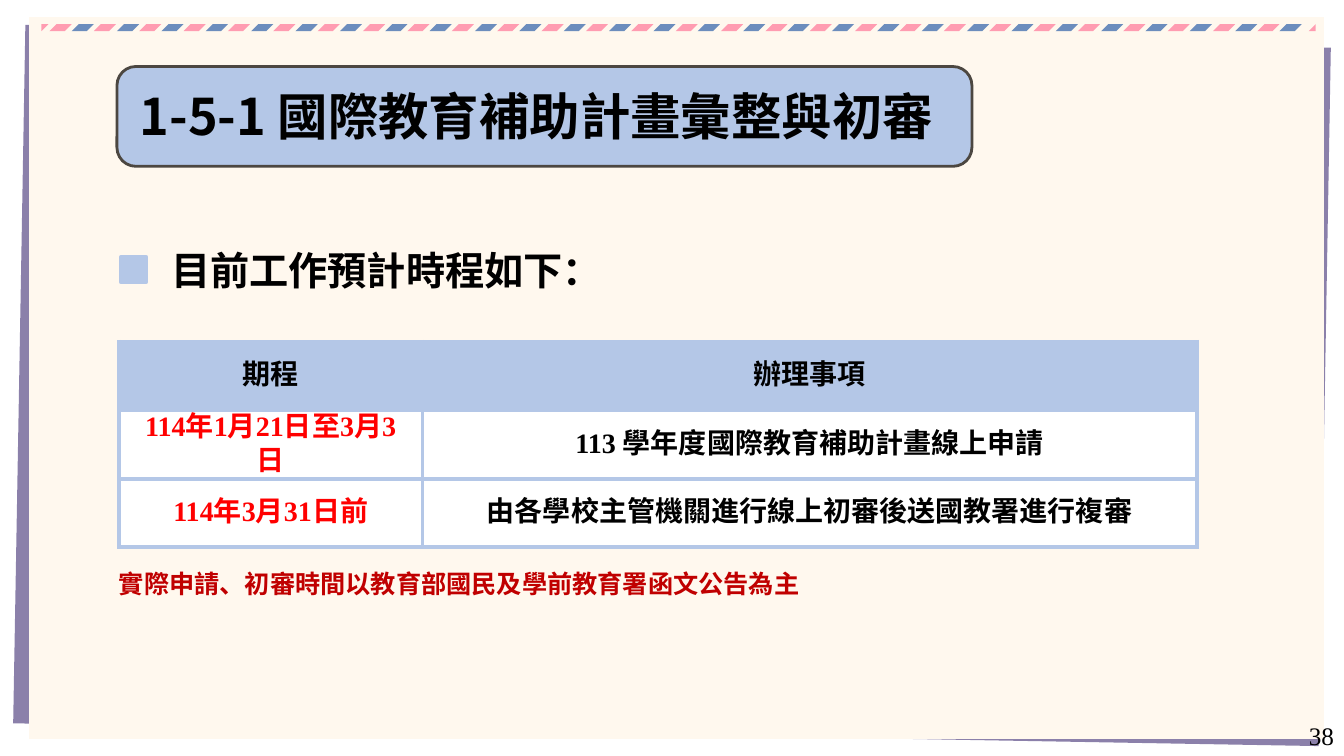
import lxml.etree
import pptx
import pptx.dml.color
import pptx.enum.shapes
import pptx.enum.text
import pptx.oxml.ns
import pptx.util

PX = 9144  # 100 px to the inch
SANS, SERIF = "Noto Sans CJK SC", "Times New Roman"
BLUE, PINK, STRIPE_BLUE = "B4C7E7", "FF9CB1", "6C8DBD"
BLACK, RED, DARK_RED = "000000", "FF0000", "C00000"
SHAPE = pptx.enum.shapes.MSO_SHAPE
ALIGN = pptx.enum.text.PP_ALIGN
ANCHOR = pptx.enum.text.MSO_ANCHOR
qn = pptx.oxml.ns.qn


def px(*lengths):
    return [pptx.util.Emu(n * PX) for n in lengths]


def rgb(color):
    return pptx.dml.color.RGBColor.from_string(color)


def add_box(s, kind, box, fill, line=None, width=1, rotation=0, adj=None):
    sp = s.shapes.add_shape(kind, *px(*box))
    sp.shadow.inherit = False
    sp.rotation = rotation
    if adj is not None:
        sp.adjustments[0] = adj
    sp.fill.solid()
    sp.fill.fore_color.rgb = rgb(fill)
    if line:
        sp.line.color.rgb = rgb(line)
        sp.line.width = pptx.util.Pt(width)
    else:
        sp.line.fill.background()
    return sp


def write(tf, text, size, color, font=SANS, bold=True, align=ALIGN.LEFT):
    p = tf.paragraphs[0]
    p.alignment = align
    r = p.add_run()
    r.text = text
    r.font.size = pptx.util.Pt(size)
    r.font.bold = bold
    r.font.name = font
    r.font.color.rgb = rgb(color)
    ea = lxml.etree.SubElement(r.font._element, qn("a:ea"))
    ea.set("typeface", SANS)
    return p


def add_text(s, box, text, size, color, **style):
    tf = s.shapes.add_textbox(*px(*box)).text_frame
    tf.word_wrap = True
    tf.vertical_anchor = ANCHOR.MIDDLE
    write(tf, text, size, color, **style)


def add_paper(s, x, y, w, h):
    # Tilted sheet behind the cream page
    add_box(s, SHAPE.RECTANGLE, (x - 10, y + 19, w + 11, h - 23), "8B80AA", rotation=1)
    add_box(s, SHAPE.RECTANGLE, (x, y, w, h), "FFF8EE")

    # Airmail stripes, closed by a triangle at each end
    left, top, size, count = x + 20, y + 7, 7, 56
    pitch = (w - 35) / (count + 0.3)
    for i in range(count):
        stripe = (left + round(i * pitch), top, 22, size)
        add_box(s, SHAPE.PARALLELOGRAM, stripe, (PINK, STRIPE_BLUE)[i % 2], adj=1)
    for end, rotation in ((x + 12, 90), (x + w - 15, 270)):
        add_box(s, SHAPE.RIGHT_TRIANGLE, (end, top, size, size), PINK, rotation=rotation)


def add_title(s, x, y, w, h, text):
    add_box(s, SHAPE.ROUNDED_RECTANGLE, (x, y, w, h), BLUE, "4C4741", 2, adj=0.19)
    title = s.shapes.title
    title.left, title.top, title.width, title.height = px(x + 2, y + 13, w - 20, 71)
    tf = title.text_frame
    tf.word_wrap = False
    tf.auto_size = pptx.enum.text.MSO_AUTO_SIZE.NONE
    tf.vertical_anchor = ANCHOR.MIDDLE
    write(tf, text, 36, BLACK, align=ALIGN.CENTER)
    s.shapes._spTree.append(title._element)  # bring the title above its band


def add_heading(s, x, y, w, h, text):
    add_box(s, SHAPE.RECTANGLE, (x, y + 16, 25, 25), BLUE, BLUE, 3)
    add_text(s, (x + 40, y, w - 40, h), text, 28, BLACK)


def set_borders(cell, color, width):
    tcPr = cell._tc.get_or_add_tcPr()
    for i, side in enumerate(("a:lnL", "a:lnR", "a:lnT", "a:lnB")):
        ln = lxml.etree.Element(qn(side), w=str(pptx.util.Pt(width)))
        fill = lxml.etree.SubElement(ln, qn("a:solidFill"))
        lxml.etree.SubElement(fill, qn("a:srgbClr"), val=color)
        tcPr.insert(i, ln)


def add_schedule(s, x, y, w, h, rows):
    frame = s.shapes.add_table(len(rows), 2, *px(x, y, w, h))
    table = frame.table
    table.horz_banding = False
    table.columns[0].width, table.columns[1].width = px(301, w - 301)
    for i, row in enumerate(rows):
        table.rows[i].height, = px(h // len(rows))
        for j, text in enumerate(row):
            cell = table.cell(i, j)
            cell.fill.solid()
            cell.fill.fore_color.rgb = rgb("FFFFFF" if i else BLUE)
            set_borders(cell, BLUE, 3)
            cell.margin_left, cell.margin_right = px(15, 15)
            cell.margin_top = cell.margin_bottom = 0
            cell.vertical_anchor = ANCHOR.MIDDLE
            color = RED if i and j == 0 else BLACK
            p = write(cell.text_frame, text, 20, color, font=SERIF, align=ALIGN.CENTER)
            p.line_spacing = pptx.util.Pt(24)


def main():
    prs = pptx.Presentation()
    prs.slide_width, prs.slide_height = px(1333, 750)
    s = prs.slides.add_slide(prs.slide_layouts[5])

    add_paper(s, 29, 17, 1284, 716)
    add_title(s, 116, 66, 848, 99, "1-5-1 國際教育補助計畫彙整與初審")
    add_heading(s, 120, 239, 472, 57, "目前工作預計時程如下：")
    add_schedule(s, 118, 339, 1069, 204, [
        ("期程", "辦理事項"),
        ("114年1月21日至3月3日", "113 學年度國際教育補助計畫線上申請"),
        ("114年3月31日前", "由各學校主管機關進行線上初審後送國教署進行複審"),
    ])

    # Closing note and page number
    add_text(s, (108, 559, 788, 40),
             "實際申請、初審時間以教育部國民及學前教育署函文公告為主", 18, DARK_RED)
    add_text(s, (1033, 710, 300, 40), "38", 18, BLACK,
             font=SERIF, bold=False, align=ALIGN.RIGHT)
    prs.save("out.pptx")


if __name__ == "__main__":
    main()
